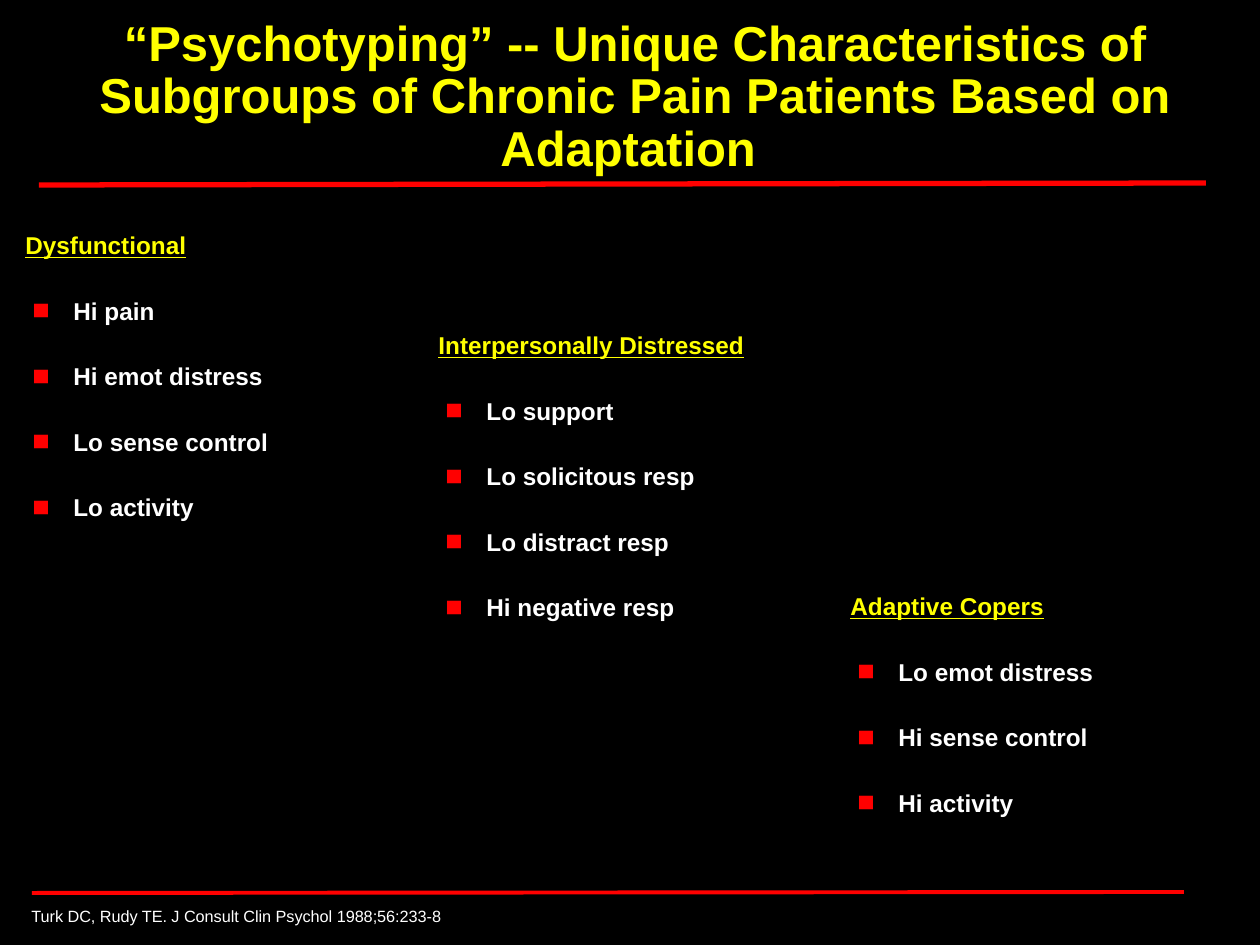
from dataclasses import dataclass

from lxml import etree
from pptx import Presentation
from pptx.dml.color import RGBColor
from pptx.enum.shapes import MSO_CONNECTOR
from pptx.enum.text import MSO_ANCHOR, PP_ALIGN
from pptx.oxml.ns import qn
from pptx.util import Emu, Pt

PX_PER_INCH = 126
STRAIGHT = MSO_CONNECTOR.STRAIGHT
TOP, MIDDLE = MSO_ANCHOR.TOP, MSO_ANCHOR.MIDDLE
LEFT, CENTER = PP_ALIGN.LEFT, PP_ALIGN.CENTER
BLACK, WHITE, YELLOW, RED = "000000", "FFFFFF", "FFFF00", "FF0000"
BULLET_INDENT = 48
RAISED = "30000"


@dataclass
class Box:
    left: int
    top: int
    width: int
    height: int


@dataclass
class Subgroup:
    heading: str
    traits: list[str]
    box: Box


@dataclass
class Rule:
    start: tuple[int, int]
    end: tuple[int, int]
    weight: float


SUBGROUPS = [
    Subgroup("Dysfunctional",
             ["Hi pain", "Hi emot distress", "Lo sense control", "Lo activity"],
             Box(13, 204, 406, 394)),
    Subgroup("Interpersonally Distressed",
             ["Lo support", "Lo solicitous resp", "Lo distract resp", "Hi negative resp"],
             Box(426, 304, 512, 391)),
    Subgroup("Adaptive Copers",
             ["Lo emot distress", "Hi sense control", "Hi activity"],
             Box(838, 565, 412, 267)),
]
RULES = [
    Rule((39, 185), (1206, 183), 3),
    Rule((32, 893), (1184, 892), 2.25),
]


def px(value: int) -> Emu:
    return Emu(round(value * 914400 / PX_PER_INCH))


def color(value: str) -> RGBColor:
    return RGBColor.from_string(value)


def add_frame(slide, box: Box, anchor=TOP):
    shape = slide.shapes.add_textbox(px(box.left), px(box.top), px(box.width), px(box.height))
    frame = shape.text_frame
    frame.word_wrap = True
    frame.vertical_anchor = anchor
    return frame


def write(paragraph, text: str, size: int, text_color: str, bold: bool = False,
          spacing: float = 1.0, alignment=LEFT) -> None:
    paragraph.add_run().text = text
    paragraph.alignment = alignment
    paragraph.line_spacing = spacing
    font = paragraph.font
    font.name, font.size, font.bold = "Arial", Pt(size), bold
    font.color.rgb = color(text_color)


def raise_text(paragraph) -> None:
    """Set every run as superscript."""
    for run in paragraph.runs:
        run.font._element.set("baseline", RAISED)


def add_bullet(paragraph) -> None:
    properties = paragraph._p.get_or_add_pPr()
    properties.set("marL", str(px(BULLET_INDENT)))
    properties.set("indent", str(-px(BULLET_INDENT)))
    bullet_color = etree.SubElement(properties, qn("a:buClr"))
    etree.SubElement(bullet_color, qn("a:srgbClr"), val=RED)
    etree.SubElement(properties, qn("a:buChar"), char="▪")


def add_subgroup(slide, subgroup: Subgroup) -> None:
    frame = add_frame(slide, subgroup.box)
    heading = frame.paragraphs[0]
    write(heading, subgroup.heading, 24, YELLOW, bold=True, spacing=1.3)
    heading.font.underline = True
    raise_text(heading)
    for trait in subgroup.traits:
        paragraph = frame.add_paragraph()
        add_bullet(paragraph)
        write(paragraph, trait, 24, WHITE, bold=True, spacing=1.3)
        raise_text(paragraph)


def add_rule(slide, rule: Rule) -> None:
    points = [px(value) for value in (*rule.start, *rule.end)]
    connector = slide.shapes.add_connector(STRAIGHT, *points)
    connector.line.color.rgb = color(RED)
    connector.line.width = Pt(rule.weight)
    etree.SubElement(connector._element.spPr, qn("a:effectLst"))


def main() -> None:
    presentation = Presentation()
    presentation.slide_width, presentation.slide_height = px(1260), px(945)
    slide = presentation.slides.add_slide(presentation.slide_layouts[6])
    slide.background.fill.solid()
    slide.background.fill.fore_color.rgb = color(BLACK)

    title = add_frame(slide, Box(35, 16, 1200, 164), MIDDLE)
    write(title.paragraphs[0],
          "“Psychotyping” -- Unique Characteristics of Subgroups of "
          "Chronic Pain Patients Based on Adaptation ",
          28, YELLOW, bold=True, spacing=0.89, alignment=CENTER)
    for subgroup in SUBGROUPS:
        add_subgroup(slide, subgroup)
    citation = add_frame(slide, Box(19, 897, 750, 47)).paragraphs[0]
    write(citation, "Turk DC, Rudy TE. J Consult Clin Psychol 1988;56:233-8", 16, WHITE)
    raise_text(citation)
    for rule in RULES:
        add_rule(slide, rule)
    presentation.save("out.pptx")


if __name__ == "__main__":
    main()
